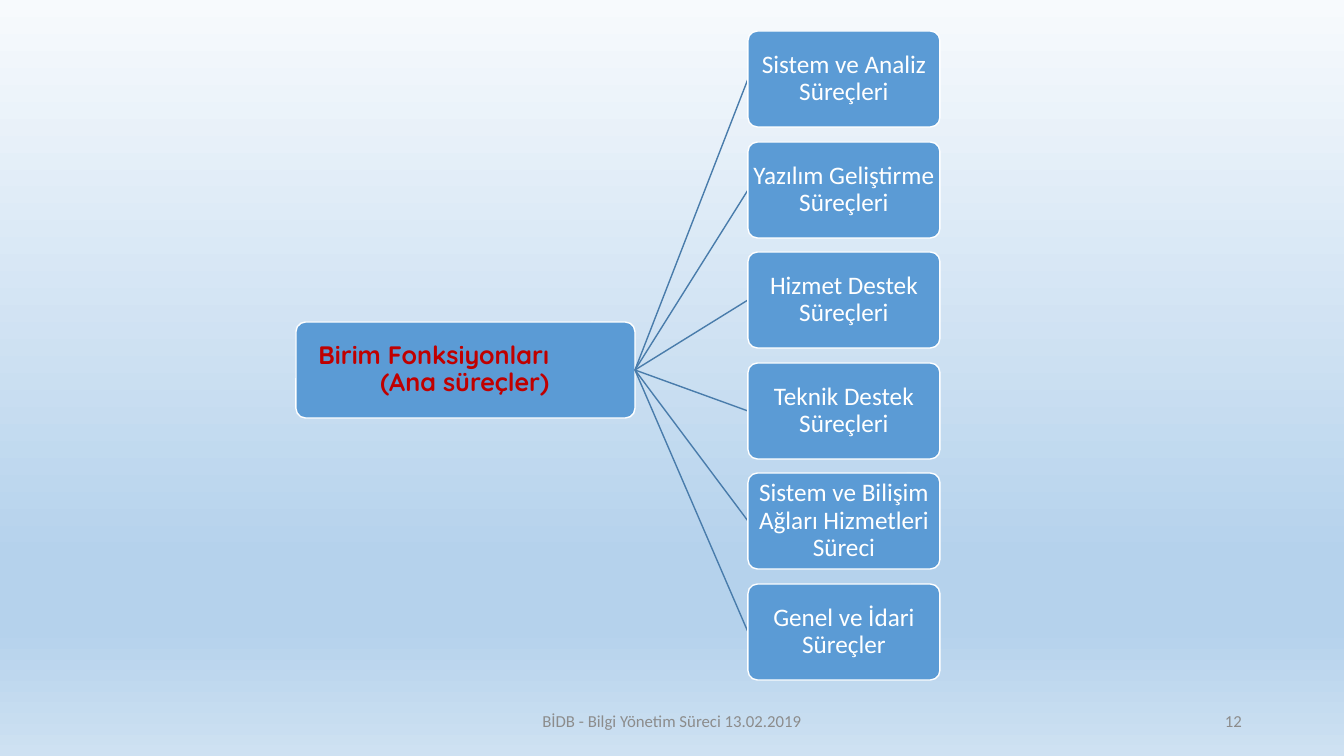
"""Build the slide of unit functions and their processes."""
import dataclasses
import lxml.etree
import pptx
import pptx.dml.color
import pptx.enum.shapes
import pptx.enum.text
import pptx.oxml.ns
import pptx.util

SCALE = 914400 / 100.8
COLORS = {
    "box": "5B9BD5", "edge": "FFFFFF", "link": "497CAB",
    "root": "C00000", "leaf": "FFFFFF", "foot": "8C8C8C",
}
STOPS = [(0, "F7FAFD"), (74, "B5D2EC"), (83, "B5D2EC"), (100, "CEE1F2")]
ALIGN = pptx.enum.text.PP_ALIGN
TOP, PITCH = 31, 110.6
qn = pptx.oxml.ns.qn


@dataclasses.dataclass
class Label:
    text: str
    left: int
    top: int
    width: int
    height: int
    color: str = "leaf"
    size: int = 18
    font: str = "Calibri"
    bold: bool = False
    align: ALIGN = ALIGN.CENTER
    inset: int = 1
    right: int = 1
    space: float = 0.9


LEAVES = [
    "Sistem ve Analiz Süreçleri",
    "Yazılım Geliştirme Süreçleri",
    "Hizmet Destek Süreçleri",
    "Teknik Destek Süreçleri",
    "Sistem ve Bilişim Ağları Hizmetleri Süreci",
    "Genel ve İdari Süreçler",
]
ROOT = Label("Birim Fonksiyonları\v(Ana süreçler)", 296, 322, 339, 96, "root",
             font="Quicksand", bold=True, align=ALIGN.RIGHT, right=83)
FOOTERS = [
    Label("12", 950, 701, 302, 40, "foot", 12, align=ALIGN.RIGHT,
          inset=10, right=10, space=1.0),
    Label("BİDB - Bilgi Yönetim Süreci 13.02.2019", 445, 701, 454, 40, "foot",
          12, inset=10, right=10, space=1.0),
]


def px(count: int) -> int:
    return round(count * SCALE)


def rgb(name: str) -> pptx.dml.color.RGBColor:
    return pptx.dml.color.RGBColor.from_string(COLORS[name])


def place(label: Label) -> tuple[int, ...]:
    return tuple(map(px, (label.left, label.top, label.width, label.height)))


def write(shape, label: Label) -> None:
    frame = shape.text_frame
    frame.word_wrap = True
    frame.vertical_anchor = pptx.enum.text.MSO_ANCHOR.MIDDLE
    frame.margin_left = px(label.inset)
    frame.margin_right = px(label.right)
    frame.margin_top = frame.margin_bottom = px(1)
    frame.text = label.text
    para = frame.paragraphs[0]
    para.alignment = label.align
    para.line_spacing = label.space
    for run in para.runs:
        run.font.name = label.font
        run.font.size = pptx.util.Pt(label.size)
        run.font.bold = label.bold
        run.font.color.rgb = rgb(label.color)


def box(slide, label: Label) -> None:
    kind = pptx.enum.shapes.MSO_SHAPE.ROUNDED_RECTANGLE
    shape = slide.shapes.add_shape(kind, *place(label))
    shape.adjustments[0] = 0.1
    shape.shadow.inherit = False
    shape.fill.solid()
    shape.fill.fore_color.rgb = rgb("box")
    shape.line.color.rgb = rgb("edge")
    shape.line.width = pptx.util.Pt(1)
    write(shape, label)


def link(slide, start: Label, end: Label) -> None:
    kind = pptx.enum.shapes.MSO_CONNECTOR.STRAIGHT
    line = slide.shapes.add_connector(
        kind, px(start.left + start.width), px(start.top + start.height // 2),
        px(end.left), px(end.top + end.height // 2))
    line.line.color.rgb = rgb("link")
    line.line.width = pptx.util.Pt(1)
    props = line.element.find(qn("p:spPr"))
    lxml.etree.SubElement(props, qn("a:effectLst"))


def paint(slide) -> None:
    fill = slide.background.fill
    fill.gradient()
    fill.gradient_angle = 270
    stops = slide.element.find(".//" + qn("a:gsLst"))
    for stop in list(stops):
        stops.remove(stop)
    for spot, color in STOPS:
        stop = lxml.etree.SubElement(stops, qn("a:gs"), pos=str(spot * 1000))
        lxml.etree.SubElement(stop, qn("a:srgbClr"), val=color)


def main() -> None:
    deck = pptx.Presentation()
    deck.slide_width, deck.slide_height = px(1344), px(756)
    slide = deck.slides.add_slide(deck.slide_layouts[6])
    paint(slide)
    box(slide, ROOT)
    for row, text in enumerate(LEAVES):
        leaf = Label(text, 748, round(TOP + row * PITCH), 192, 96)
        link(slide, ROOT, leaf)
        box(slide, leaf)
    for label in FOOTERS:
        write(slide.shapes.add_textbox(*place(label)), label)
    deck.save("out.pptx")


if __name__ == "__main__":
    main()
